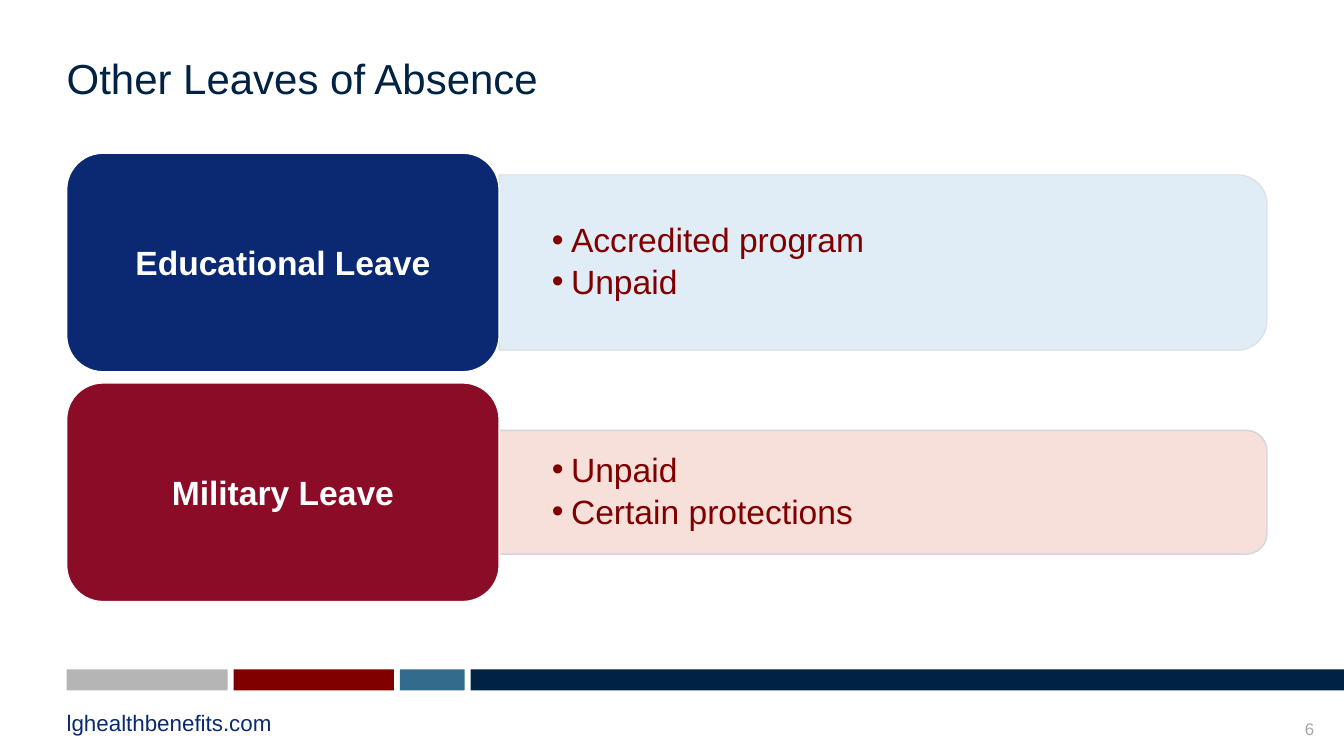
"""Build the slide on other leaves of absence."""
from dataclasses import dataclass
from lxml.etree import SubElement
from pptx import Presentation
from pptx.dml.color import RGBColor
from pptx.enum.shapes import MSO_SHAPE as Shape
from pptx.enum.text import MSO_ANCHOR as Anchor, MSO_AUTO_SIZE as Fit, PP_ALIGN as Align
from pptx.oxml.ns import qn
from pptx.util import Cm, Pt


@dataclass(frozen=True)
class Theme:
    face: str = "Arial"
    ink: str = "002243"
    blue: str = "0A2972"
    wine: str = "8B0C26"
    red: str = "800000"
    teal: str = "326B8B"
    gray: str = "B4B5B4"
    pale: str = "A6A6A6"
    sky: str = "E0EDF7"
    rose: str = "F7DDD7"
    edge: str = "CED4DA"
    white: str = "FFFFFF"
    head: int = 30
    body: int = 24
    foot: int = 16
    page: int = 12


def draw(kind, left, top, width, height, fill, line=None):
    shape = slide.shapes.add_shape(kind, Cm(left), Cm(top), Cm(width), Cm(height))
    shape.shadow.inherit = False
    shape.fill.solid()
    shape.fill.fore_color.rgb = RGBColor.from_string(fill)
    if line:
        shape.line.color.rgb = RGBColor.from_string(line)
        shape.line.width = Pt(1)
    else:
        shape.line.fill.background()
    return shape


def write(shape, text, size, color, align=Align.LEFT, anchor=Anchor.MIDDLE, pad=(0, 0), bold=False):
    frame = shape.text_frame
    frame.text = text
    frame.word_wrap = True
    frame.auto_size = Fit.NONE
    frame.vertical_anchor = anchor
    frame.margin_left = frame.margin_right = Cm(pad[0])
    frame.margin_top = frame.margin_bottom = Cm(pad[1])
    for para in frame.paragraphs:
        para.alignment = align
        for run in para.runs:
            run.font.name = theme.face
            run.font.size = Pt(size)
            run.font.bold = bold
            run.font.color.rgb = RGBColor.from_string(color)


theme = Theme()
deck = Presentation()
deck.slide_width, deck.slide_height = Cm(33.87), Cm(19.05)
slide = deck.slides.add_slide(deck.slide_layouts[3])
edge = 1.68

title = slide.shapes.title
title.left, title.top, title.width, title.height = Cm(edge), Cm(1.32), Cm(30.76), Cm(1.27)
write(title, "Other Leaves of Absence", theme.head, theme.ink)

left = edge
for width, color in ((4.06, theme.gray), (4.04, theme.red), (1.63, theme.teal), (22.01, theme.ink)):
    draw(Shape.RECTANGLE, left, 16.87, width, 0.53, color)
    left += width + 0.15

notes = (
    ("lghealthbenefits.com", edge, 17.86, 10.36, 0.69, theme.foot, theme.blue, Align.LEFT),
    ("6", 32.26, 18.11, 0.86, 0.51, theme.page, theme.pale, Align.RIGHT),
)
for text, left, top, width, height, size, color, align in notes:
    box = slide.shapes.add_textbox(Cm(left), Cm(top), Cm(width), Cm(height))
    write(box, text, size, color, align, Anchor.BOTTOM)

wide, tall, gap, span = 10.9, 5.51, 0.28, 19.35
start = edge + wide
leaves = (
    ("Educational Leave", ("Accredited program", "Unpaid"), theme.blue, theme.sky, 4.42, 100, 50),
    ("Military Leave", ("Unpaid", "Certain protections"), theme.wine, theme.rose, 3.12, 90, 90),
)
for row, (name, points, dark, light, depth, solid, rim) in enumerate(leaves):
    top = 3.86 + row * (tall + gap)
    mid = top + tall / 2

    panel = draw(Shape.ROUND_2_SAME_RECTANGLE, start + (span - depth) / 2, mid - span / 2,
                 depth, span, light, theme.edge)
    panel.rotation = 90
    for tint, alpha in zip(panel._element.iter(qn("a:srgbClr")), (solid, rim)):
        SubElement(tint, qn("a:alpha")).set("val", str(alpha * 1000))

    body = slide.placeholders[row + 1]
    panel._element.addnext(body._element)
    height = depth - 0.3
    body.left, body.top, body.width, body.height = Cm(start), Cm(mid - height / 2), Cm(19.15), Cm(height)
    write(body, "\n".join(points), theme.body, theme.red, pad=(0.69, 0.36))
    for para in body.text_frame.paragraphs:
        para.level = 1
        props = para._p.get_or_add_pPr()
        props.set("marL", str(Cm(1.12)))
        props.set("indent", str(Cm(-0.48)))
        SubElement(props, qn("a:buChar")).set("char", "•")
        para.line_spacing = 0.9
        para.space_before = Pt(0)
        para.space_after = Pt(4)

    label = draw(Shape.ROUNDED_RECTANGLE, edge, top, wide, tall, dark, theme.white)
    write(label, name, theme.body, theme.white, Align.CENTER, pad=(0.25, 0.13), bold=True)

deck.save("out.pptx")
